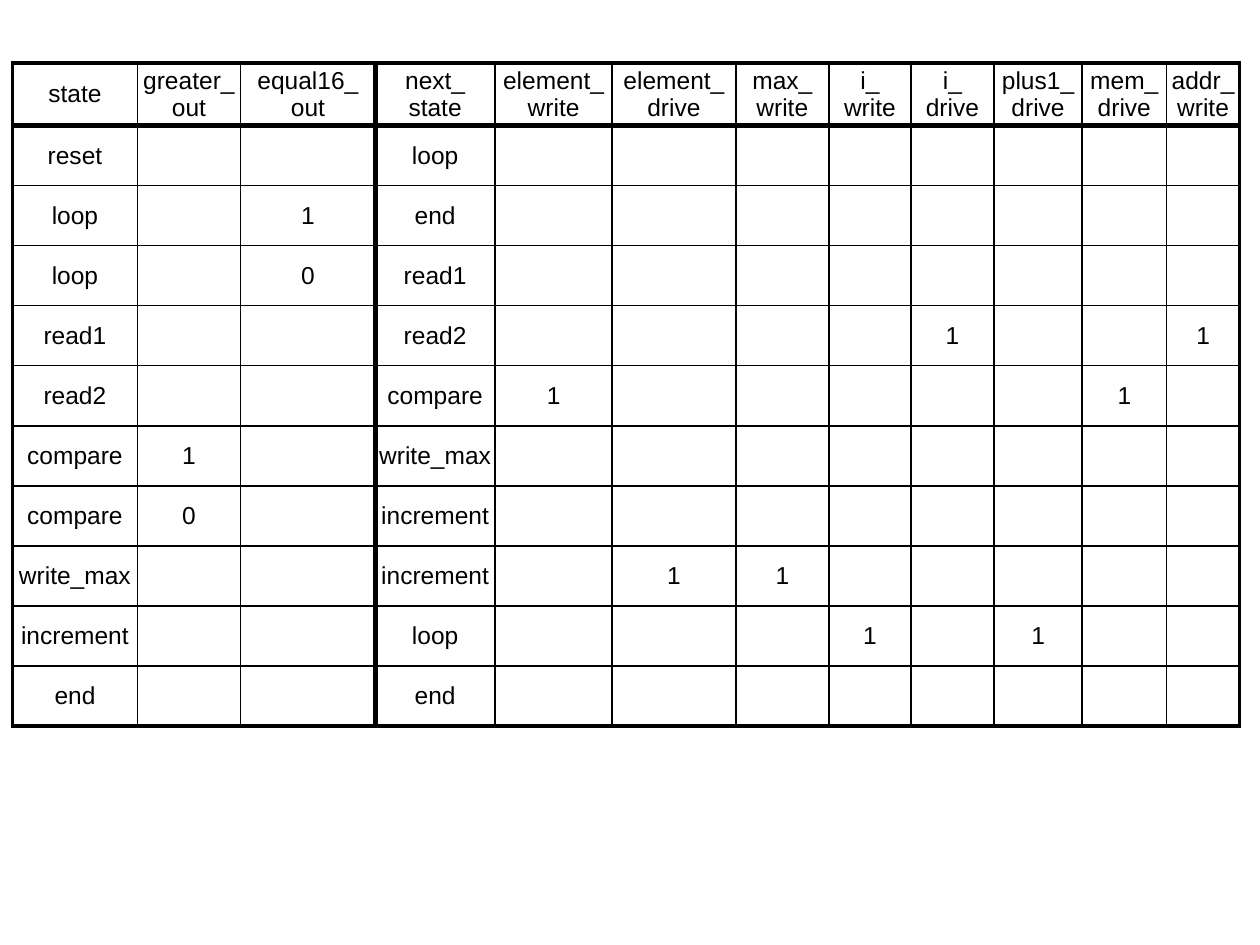
from lxml.etree import SubElement
from pptx import Presentation
from pptx.dml.color import RGBColor
from pptx.enum.text import MSO_ANCHOR, PP_ALIGN
from pptx.oxml import parse_xml
from pptx.oxml.ns import nsdecls, qn
from pptx.util import Pt

BLACK = RGBColor(0, 0, 0)
WHITE = RGBColor(255, 255, 255)

# Line widths in points
THIN, EDGE, RULE = 1, 2.25, 3

# Column widths in points
WIDTHS = [71.3, 59, 77, 68.4, 67, 70.6, 53.3, 46.8, 47.5, 50.4, 48.2, 41.8]
HIGH = 34.3

# A vertical tab breaks the line within a paragraph
HEADS = ["state"] + [name.replace("_", "_\v") for name in (
    "greater_out", "equal16_out", "next_state", "element_write",
    "element_drive", "max_write", "i_write", "i_drive", "plus1_drive",
    "mem_drive", "addr_write")]
INPUTS = 3

# State, greater_out, equal16_out, next state, columns of the outputs set to 1
STEPS = [
    ("reset", "", "", "loop", ()),
    ("loop", "", "1", "end", ()),
    ("loop", "", "0", "read1", ()),
    ("read1", "", "", "read2", (8, 11)),
    ("read2", "", "", "compare", (4, 10)),
    ("compare", "1", "", "write_max", ()),
    ("compare", "0", "", "increment", ()),
    ("write_max", "", "", "increment", (5, 6)),
    ("increment", "", "", "loop", (7, 9)),
    ("end", "", "", "end", ()),
]


def write(frame, text, font="Arial", size=14, color=BLACK,
          align=PP_ALIGN.CENTER, before=2.8):
    para = frame.paragraphs[0]
    para.text = text
    para.alignment = align
    para.space_before = Pt(before)
    para.font.size = Pt(size)
    for run in para.runs:
        run.font.name = font
        run.font.size = Pt(size)
        run.font.color.rgb = color


def weight(index, last, split):
    """Width of a grid line: outer edge, heavy rule or thin line."""
    if index in (0, last):
        return EDGE
    return RULE if index == split else THIN


class Board:
    def __init__(self, slide, fill=WHITE, line=BLACK, inset=2.16):
        self.slide = slide
        self.fill = fill
        self.line = line
        self.inset = Pt(inset)

    def border(self, cell, sides):
        props = cell._tc.get_or_add_tcPr()
        for spot, (side, width) in enumerate(sides.items()):
            line = parse_xml(f'<a:ln{side} {nsdecls("a")} w="{Pt(width)}"/>')
            solid = SubElement(line, qn("a:solidFill"))
            SubElement(solid, qn("a:srgbClr"), val=str(self.line))
            props.insert(spot, line)

    def cell(self, cell, text):
        cell.margin_left = cell.margin_right = self.inset
        cell.margin_top = cell.margin_bottom = self.inset
        cell.vertical_anchor = MSO_ANCHOR.MIDDLE
        cell.fill.solid()
        cell.fill.fore_color.rgb = self.fill
        write(cell.text_frame, text)

    def table(self, left, top, widths, high, data, split):
        rows, cols = len(data), len(widths)
        table = self.slide.shapes.add_table(
            rows, cols, Pt(left), Pt(top),
            Pt(sum(widths)), Pt(high * rows)).table
        table.first_row = table.horz_banding = False
        for col, width in zip(table.columns, widths):
            col.width = Pt(width)
        for row in table.rows:
            row.height = Pt(high)
        for r, line in enumerate(data):
            for c, text in enumerate(line):
                cell = table.cell(r, c)
                self.cell(cell, text)
                self.border(cell, {
                    "L": weight(c, cols, split),
                    "R": weight(c + 1, cols, split),
                    "T": weight(r, rows, 1),
                    "B": weight(r + 1, rows, 1)})


def main():
    deck = Presentation()
    deck.slide_width, deck.slide_height = Pt(720), Pt(540)
    board = Board(deck.slides.add_slide(deck.slide_layouts[6]))

    # State transition table
    data = [HEADS]
    for *names, ones in STEPS:
        marks = ["1" if col in ones else ""
                 for col in range(len(names), len(HEADS))]
        data.append(names + marks)
    board.table(7.2, 36, WIDTHS, HIGH, data, INPUTS)

    deck.save("out.pptx")


if __name__ == "__main__":
    main()
